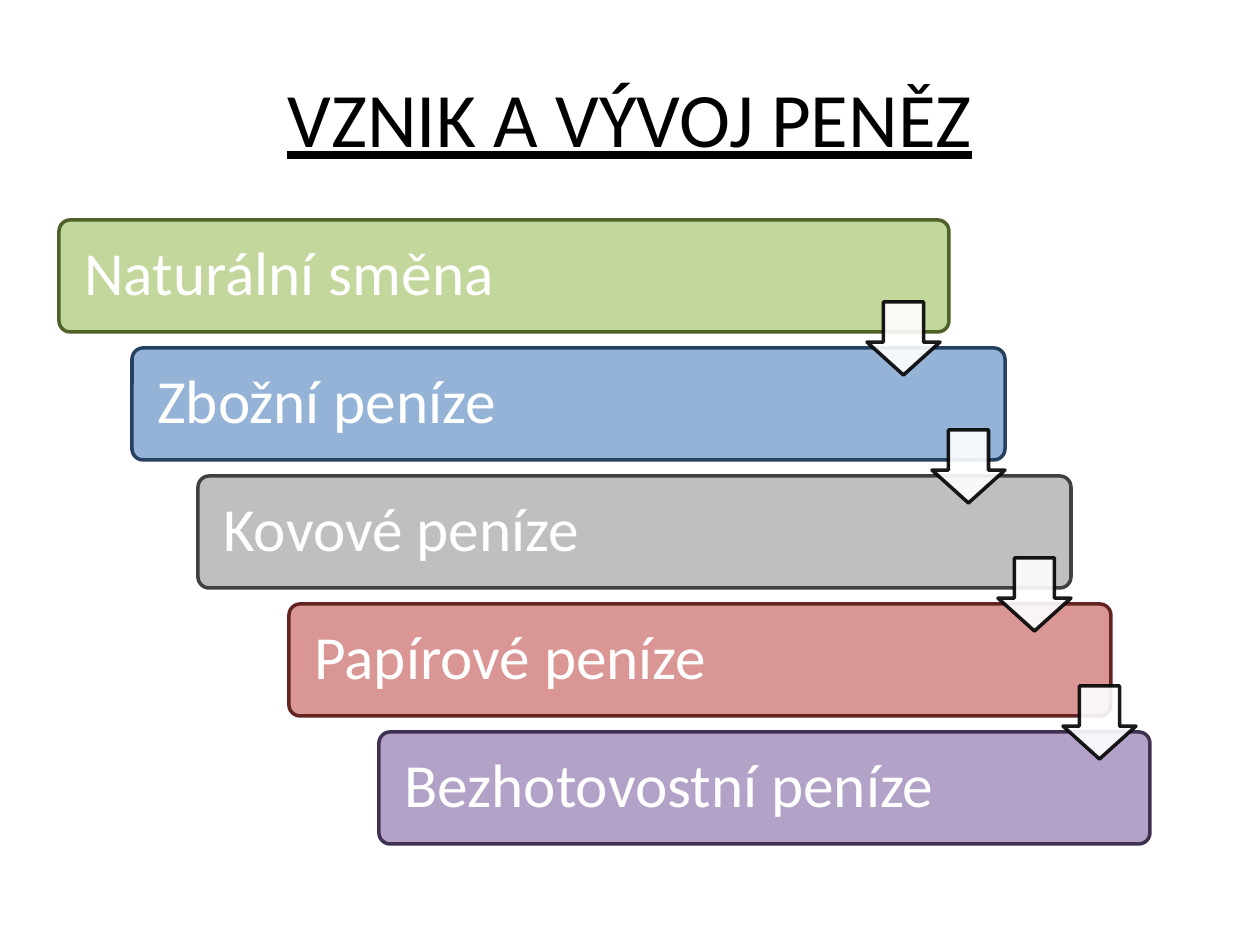
from dataclasses import dataclass

from lxml import etree
from pptx import Presentation
from pptx.dml.color import RGBColor
from pptx.enum.shapes import MSO_SHAPE
from pptx.enum.text import MSO_ANCHOR, PP_ALIGN
from pptx.oxml.ns import qn
from pptx.util import Pt

ROUND = MSO_SHAPE.ROUNDED_RECTANGLE
DOWN = MSO_SHAPE.DOWN_ARROW
MIDDLE = MSO_ANCHOR.MIDDLE
CENTER, LEFT = PP_ALIGN.CENTER, PP_ALIGN.LEFT
SCALE = 914400 / 126  # EMU per px


@dataclass(frozen=True)
class Theme:
    font: str = "Calibri"
    black: str = "000000"
    white: str = "FFFFFF"
    title: int = 44
    label: int = 35
    line: int = 2
    alpha: int = 90


THEME = Theme()

# Label, left, width, fill, line
STAGES = [
    ("Naturální směna", 59, 890, "C3D69B", "4F6228"),
    ("Zbožní peníze", 132, 873, "95B3D7", "254061"),
    ("Kovové peníze", 198, 873, "BFBFBF", "404040"),
    ("Papírové peníze", 289, 822, "D99694", "632523"),
    ("Bezhotovostní peníze", 379, 771, "B3A2C7", "403152"),
]
TOP, STEP, HIGH, INSET = 220, 128, 112, 22
ARROW_LEFT, ARROW_TOP, ARROW_SIZE = 867, 302, 73


def px(n):
    return round(n * SCALE)


def rgb(code):
    return RGBColor.from_string(code)


def set_text(shape, text, size, color, align):
    frame = shape.text_frame
    frame.text = text
    frame.word_wrap = True
    frame.vertical_anchor = MIDDLE
    para = frame.paragraphs[0]
    para.alignment = align
    font = para.runs[0].font
    font.name, font.size = THEME.font, Pt(size)
    font.color.rgb = rgb(color)
    return para


def add_shape(slide, kind, box, fill, line, adjust):
    shape = slide.shapes.add_shape(kind, *map(px, box))
    shape.shadow.inherit = False
    shape.fill.solid()
    shape.fill.fore_color.rgb = rgb(fill)
    shape.line.color.rgb = rgb(line)
    shape.line.width = Pt(THEME.line)
    for i, value in enumerate(adjust):
        shape.adjustments[i] = value
    return shape


def add_title(slide, text):
    box = slide.shapes.add_textbox(*map(px, (63, 38, 1134, 157)))
    para = set_text(box, text, THEME.title, THEME.black, CENTER)
    para.runs[0].font.underline = True


def add_bar(slide, row, label, left, width, fill, line):
    box = (left, TOP + row * STEP, width, HIGH)
    bar = add_shape(slide, ROUND, box, fill, line, [0.1])
    frame = bar.text_frame
    frame.margin_left = frame.margin_right = px(INSET)
    para = set_text(bar, label, THEME.label, THEME.white, LEFT)
    para.line_spacing = 0.9


def add_arrow(slide, row):
    # Each arrow moves 65.5 px right and one row down
    box = (ARROW_LEFT + row * 131 // 2, ARROW_TOP + row * STEP,
           ARROW_SIZE, ARROW_SIZE)
    arrow = add_shape(slide, DOWN, box, THEME.white, THEME.black, [0.55, 0.45])
    # Slight transparency on both fill and line
    for color in arrow.element.spPr.iter(qn("a:srgbClr")):
        alpha = etree.SubElement(color, qn("a:alpha"))
        alpha.set("val", str(THEME.alpha * 1000))


def main():
    deck = Presentation()
    deck.slide_width, deck.slide_height = px(1260), px(945)
    slide = deck.slides.add_slide(deck.slide_layouts[6])

    # Heading
    add_title(slide, "VZNIK A VÝVOJ PENĚZ")

    # Staircase of stages
    for row, stage in enumerate(STAGES):
        add_bar(slide, row, *stage)

    # Arrows between neighbouring stages
    for row in range(len(STAGES) - 1):
        add_arrow(slide, row)

    deck.save("out.pptx")


if __name__ == "__main__":
    main()
